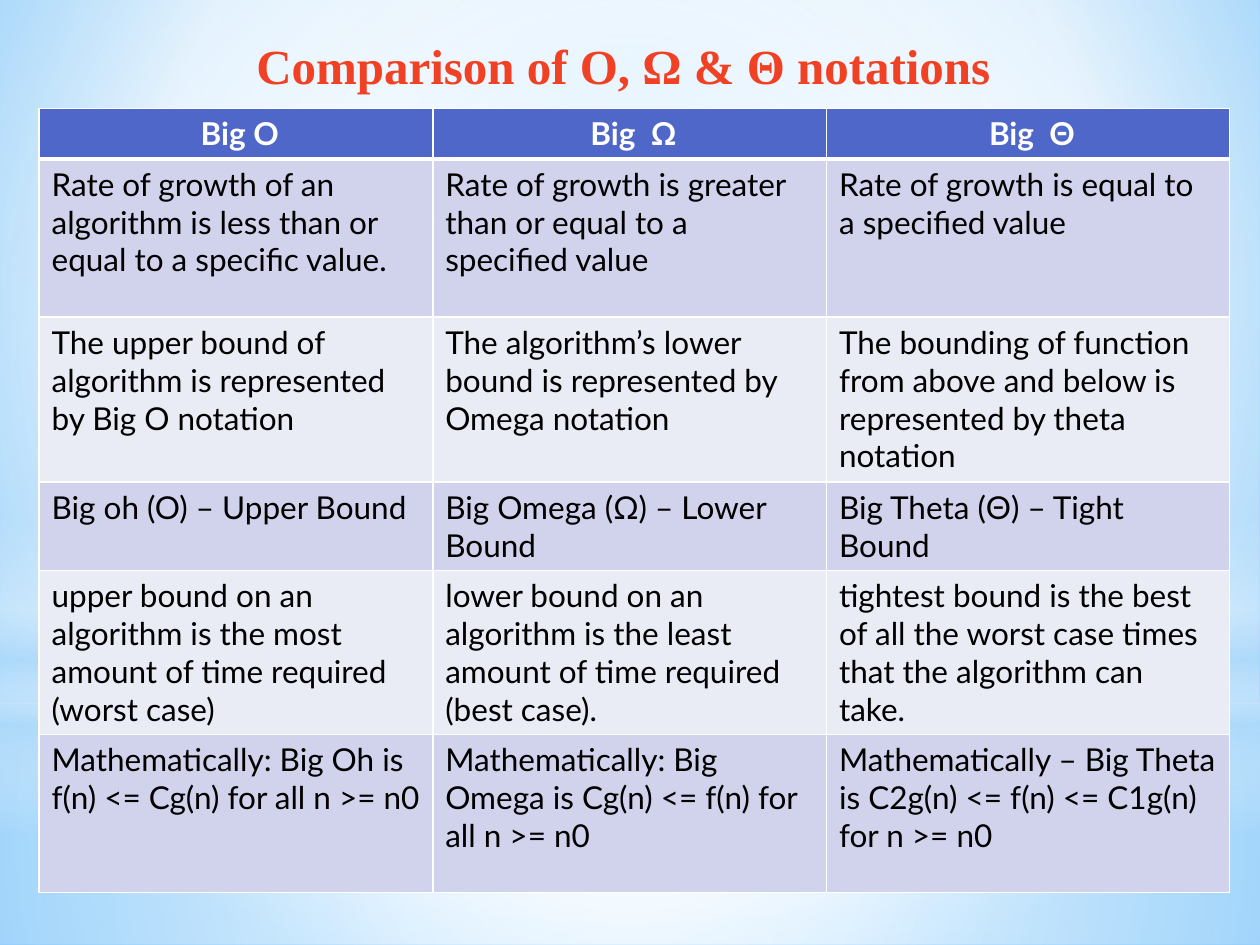
from dataclasses import dataclass
from typing import Optional

import pptx
import pptx.dml.color
import pptx.enum.shapes
import pptx.enum.text
import pptx.oxml
import pptx.oxml.ns
import pptx.util

WIDTH = pptx.util.Inches(10)
HEIGHT = pptx.util.Inches(7.5)
COLORS = {
    "white": "FFFFFF",
    "black": "000000",
    "sky": "9ED5FF",
    "deep_sky": "5BB9FF",
    "mist": "B4DCFA",
    "title": "F14124",
    "header": "4E67C8",
    "odd_row": "D0D3EB",
    "even_row": "E9EBF5",
}
PRESETS = pptx.enum.shapes.MSO_SHAPE
CENTER = pptx.enum.text.PP_ALIGN.CENTER
LEFT = pptx.enum.text.PP_ALIGN.LEFT


@dataclass(frozen=True)
class Box:
    """Percentages of the slide's width and height."""

    left: float
    top: float
    width: float
    height: float

    def lengths(self) -> tuple[int, int, int, int]:
        return (across(self.left), down(self.top), across(self.width), down(self.height))


@dataclass(frozen=True)
class Stop:
    position: int
    color: str
    opacity: int = 100


@dataclass(frozen=True)
class Glow:
    box: Box
    preset: int
    stops: tuple[Stop, ...]
    focus: Optional[tuple[int, int, int, int]] = (50, 50, 50, 50)


GLOWS = (
    Glow(Box(0, 74.4, 100, 25.6), PRESETS.RECTANGLE,
         (Stop(0, "white", 91), Stop(37, "white", 76), Stop(100, "mist", 79))),
    Glow(Box(0, 0, 100, 74.4), PRESETS.RECTANGLE,
         (Stop(0, "white", 89), Stop(48, "white", 62), Stop(100, "mist", 79))),
    Glow(Box(0, 54.93, 100, 33.33), PRESETS.RECTANGLE,
         (Stop(0, "white", 0), Stop(29, "white", 30), Stop(45, "mist", 40),
          Stop(55, "white", 26), Stop(65, "mist", 60), Stop(100, "white", 0)), None),
    Glow(Box(0, 23.33, 100, 74.4), PRESETS.OVAL,
         (Stop(0, "white"), Stop(56, "white", 0))),
)
BACKDROP = (Stop(0, "sky"), Stop(60, "white"), Stop(100, "deep_sky"))
TITLE_BOX = Box(6.2, 3.07, 87.5, 7.6)
TABLE_BOX = Box(3.1, 11.47, 94.5, 83.07)
COLUMN_SHARES = (31.25, 31.25, 32)
ROW_SHARES = (5.2, 16.75, 17.47, 9.07, 16.75, 16.75)
COMPARISON = (
    (" Big O", " Big  Ω", " Big  Θ"),
    ("Rate of growth of an algorithm is less than or equal to a specific value.",
     "Rate of growth is greater than or equal to a specified value",
     "Rate of growth is equal to a specified value"),
    ("The upper bound of algorithm is represented by Big O notation",
     "The algorithm’s lower bound is represented by Omega notation",
     "The bounding of function from above and below is represented by theta notation"),
    ("Big oh (O) – Upper Bound",
     "Big Omega (Ω) – Lower Bound",
     "Big Theta (Θ) – Tight Bound"),
    ("upper bound on an algorithm is the most amount of time required (worst case)",
     "lower bound on an algorithm is the least amount of time required (best case).",
     "tightest bound is the best of all the worst case times that the algorithm can take."),
    ("Mathematically: Big Oh is f(n) <= Cg(n) for all n >= n0",
     "Mathematically: Big Omega is Cg(n) <= f(n) for all n >= n0",
     "Mathematically – Big Theta is C2g(n) <= f(n) <= C1g(n) for n >= n0"),
)


def across(percent: float) -> int:
    return round(WIDTH * percent / 100)


def down(percent: float) -> int:
    return round(HEIGHT * percent / 100)


def rgb(name: str) -> pptx.dml.color.RGBColor:
    return pptx.dml.color.RGBColor.from_string(COLORS[name])


def set_gradient(fill, owner, stops, focus) -> None:
    fill.gradient()
    plain = owner.find(".//" + pptx.oxml.ns.qn("a:gradFill"))
    marks = "".join(
        f'<a:gs pos="{stop.position * 1000}"><a:srgbClr val="{COLORS[stop.color]}">'
        f'<a:alpha val="{stop.opacity * 1000}"/></a:srgbClr></a:gs>'
        for stop in stops
    )
    if focus:
        sides = " ".join(f'{side}="{share * 1000}"' for side, share in zip("ltrb", focus))
        direction = f'<a:path path="circle"><a:fillToRect {sides}/></a:path>'
    else:
        direction = '<a:lin ang="5400000" scaled="0"/>'
    plain.getparent().replace(plain, pptx.oxml.parse_xml(
        f'<a:gradFill {pptx.oxml.ns.nsdecls("a")} rotWithShape="1">'
        f"<a:gsLst>{marks}</a:gsLst>{direction}</a:gradFill>"
    ))


def add_glow(slide, glow: Glow) -> None:
    panel = slide.shapes.add_shape(glow.preset, *glow.box.lengths())
    panel.shadow.inherit = False
    panel.line.fill.background()
    set_gradient(panel.fill, panel._element, glow.stops, glow.focus)


def style_paragraph(paragraph, font: str, size: int, color: str, bold: bool, align) -> None:
    paragraph.alignment = align
    paragraph.font.name = font
    paragraph.font.size = pptx.util.Pt(size)
    paragraph.font.bold = bold
    paragraph.font.color.rgb = rgb(color)


def set_borders(cell, points: dict[str, int]) -> None:
    properties = cell._tc.get_or_add_tcPr()
    for side in "LRTB":
        properties.append(pptx.oxml.parse_xml(
            f'<a:ln{side} {pptx.oxml.ns.nsdecls("a")} w="{pptx.util.Pt(points.get(side, 1))}">'
            f'<a:solidFill><a:srgbClr val="{COLORS["white"]}"/></a:solidFill></a:ln{side}>'
        ))


def add_title(slide) -> None:
    title = slide.shapes.title
    title.left, title.top, title.width, title.height = TITLE_BOX.lengths()
    frame = title.text_frame
    frame.text = "Comparison of O, Ω & Θ notations "
    frame.word_wrap = True
    frame.auto_size = pptx.enum.text.MSO_AUTO_SIZE.SHAPE_TO_FIT_TEXT
    frame.vertical_anchor = pptx.enum.text.MSO_ANCHOR.TOP
    style_paragraph(frame.paragraphs[0], "Times New Roman", 28, "title", True, CENTER)
    slide.shapes._spTree.append(title._element)


def add_comparison(slide) -> None:
    table = slide.shapes.add_table(
        len(ROW_SHARES), len(COLUMN_SHARES), *TABLE_BOX.lengths()
    ).table
    for column, share in zip(table.columns, COLUMN_SHARES):
        column.width = across(share)
    for index, (row, share, texts) in enumerate(zip(table.rows, ROW_SHARES, COMPARISON)):
        row.height = down(share)
        header = index == 0
        band = "header" if header else "odd_row" if index % 2 else "even_row"
        for cell, text in zip(row.cells, texts):
            cell.text = text
            set_borders(cell, {0: {"B": 3}, 1: {"T": 3}}.get(index, {}))
            cell.fill.solid()
            cell.fill.fore_color.rgb = rgb(band)
            style_paragraph(cell.text_frame.paragraphs[0], "Lato", 18,
                            "white" if header else "black", header,
                            CENTER if header else LEFT)


def main() -> None:
    deck = pptx.Presentation()
    deck.slide_width, deck.slide_height = WIDTH, HEIGHT
    slide = deck.slides.add_slide(deck.slide_layouts[5])
    set_gradient(slide.background.fill, slide._element, BACKDROP, (20, 10, 20, 60))
    for glow in GLOWS:
        add_glow(slide, glow)
    add_comparison(slide)
    add_title(slide)
    deck.save("out.pptx")


if __name__ == "__main__":
    main()
